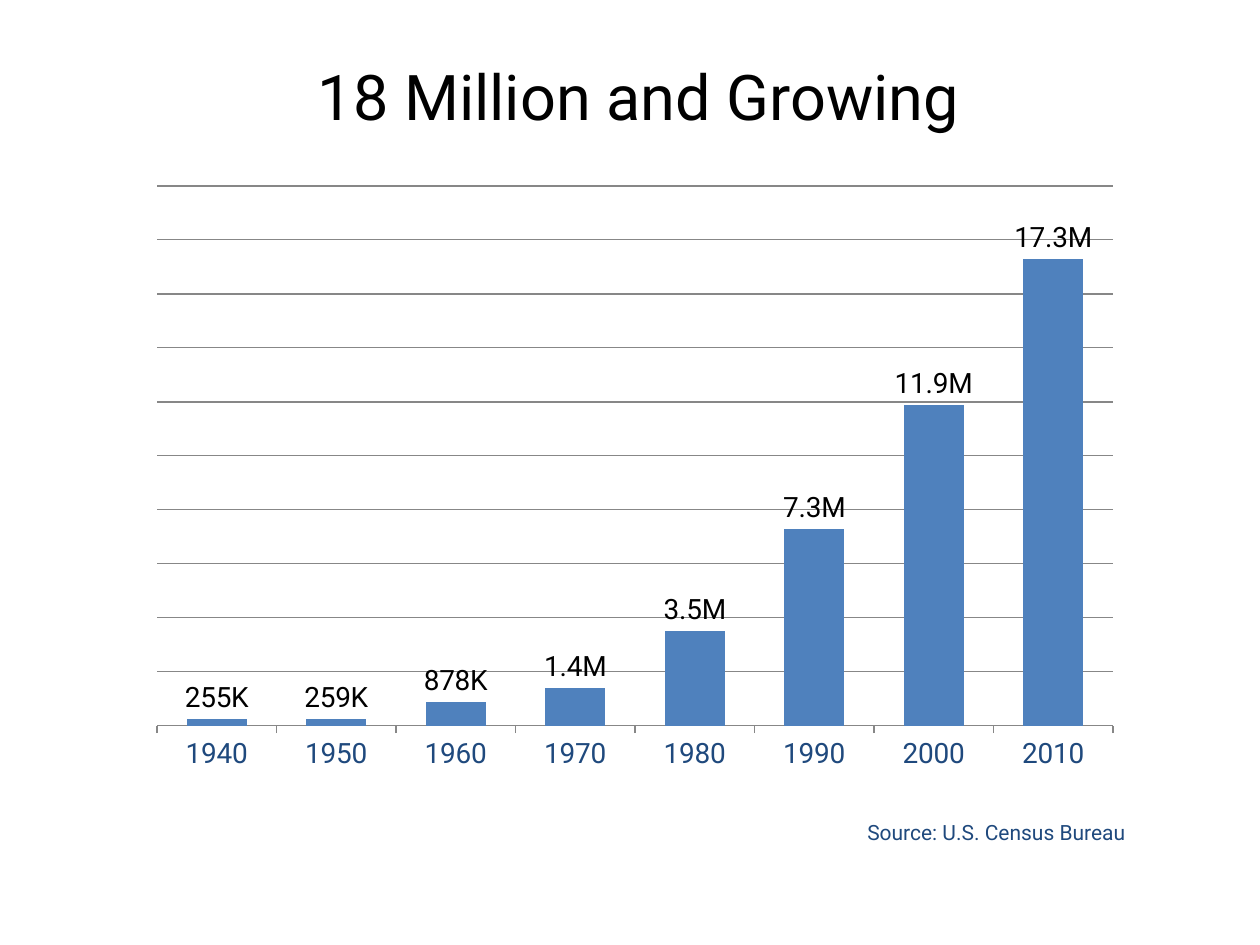
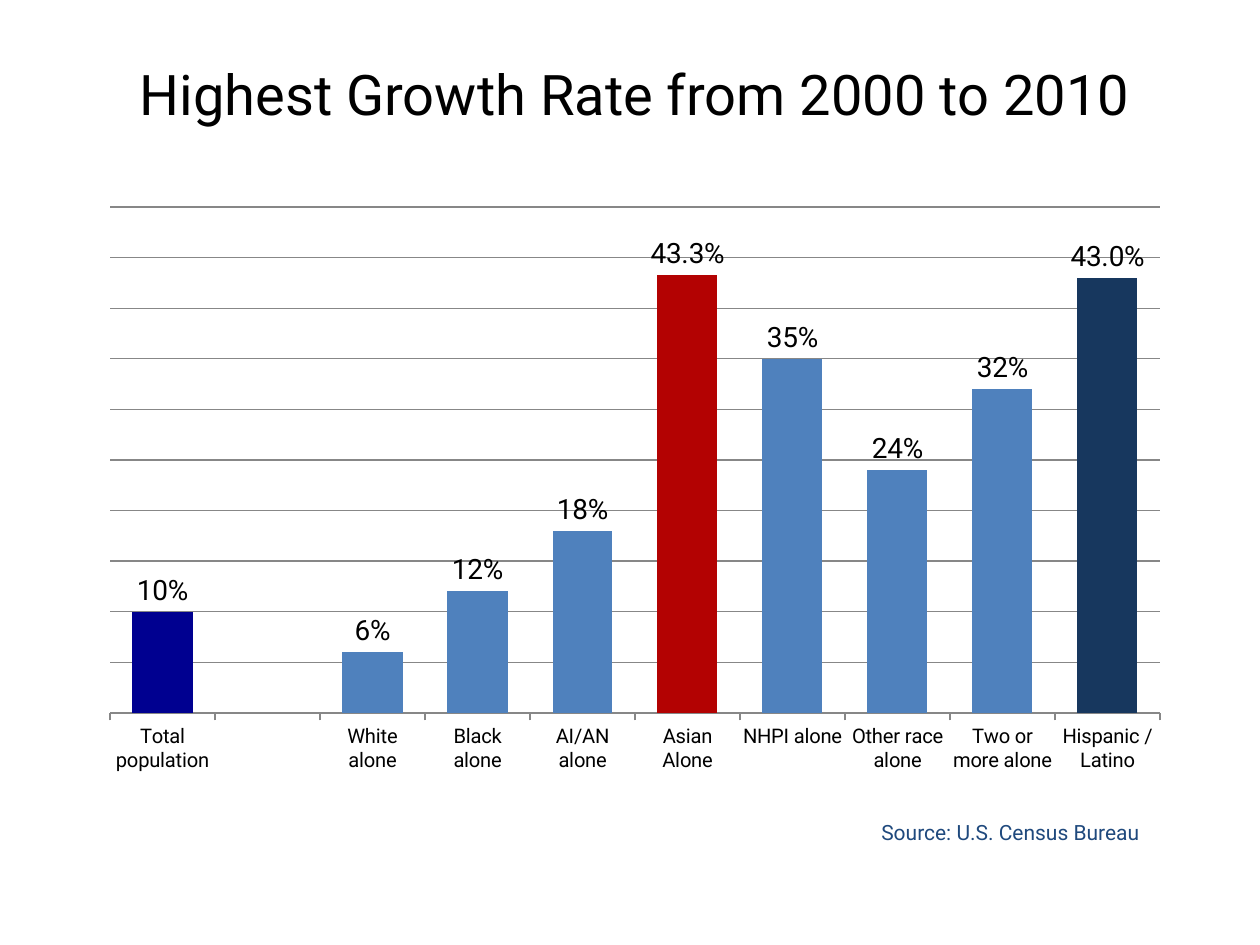
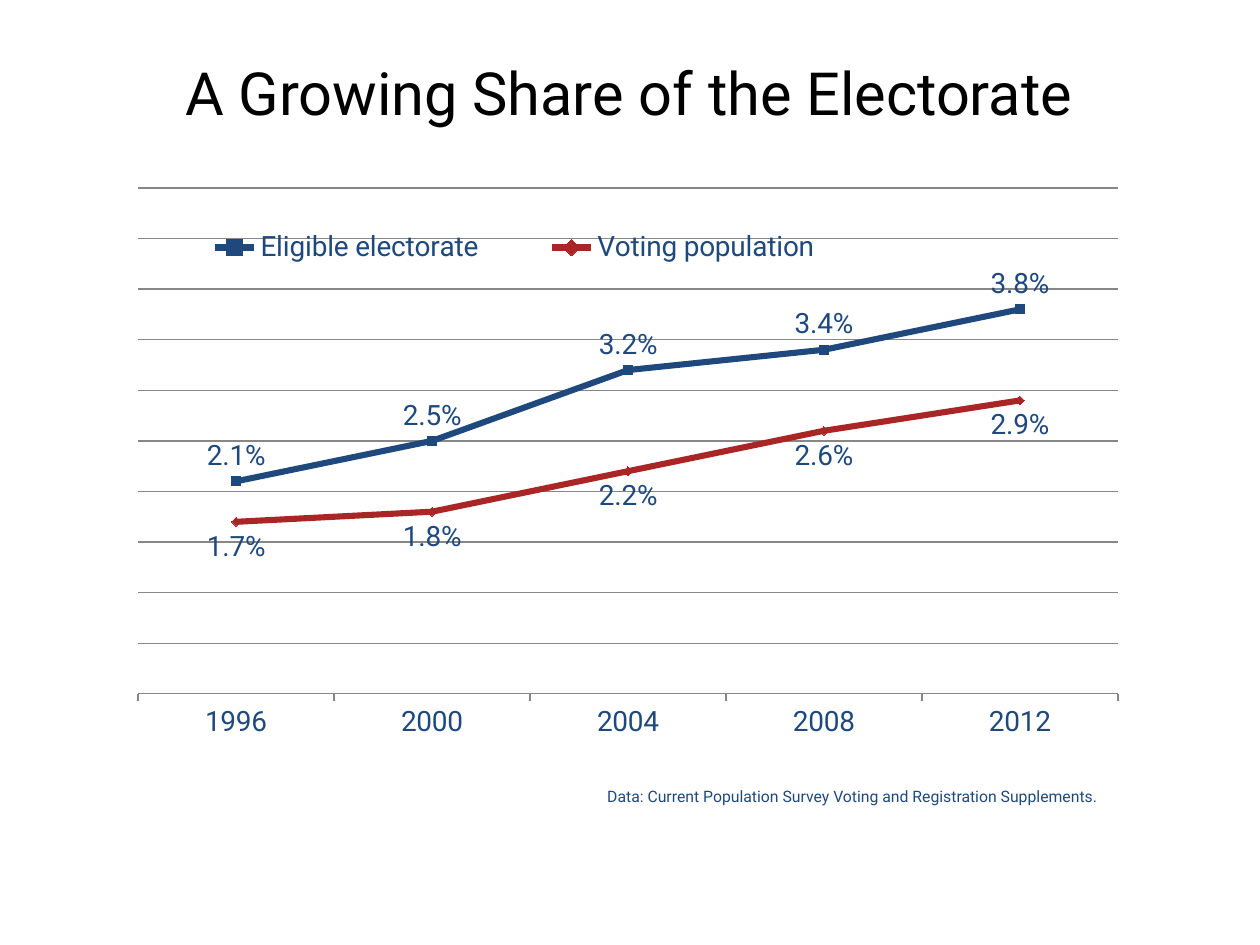
from dataclasses import dataclass

from lxml.etree import SubElement
from pptx import Presentation
from pptx.chart.data import CategoryChartData
from pptx.dml.color import RGBColor
from pptx.enum.chart import XL_CHART_TYPE as ChartType
from pptx.enum.chart import XL_LABEL_POSITION as LabelPos
from pptx.enum.chart import XL_LEGEND_POSITION as LegendPos
from pptx.enum.chart import XL_MARKER_STYLE as Marker
from pptx.enum.chart import XL_TICK_MARK as Tick
from pptx.enum.text import MSO_ANCHOR as Anchor
from pptx.enum.text import PP_ALIGN as Align
from pptx.oxml.ns import qn
from pptx.util import Emu, Pt


@dataclass(frozen=True)
class Theme:
    font: str = "Roboto"
    ink: str = "000000"
    navy: str = "1F497D"
    bar: str = "4F81BD"
    total: str = "000090"
    asian: str = "B30202"
    hispanic: str = "17375E"
    voting: str = "AA2626"
    grid: str = "878787"
    label_size: float = 16
    small_label_size: float = 11.5
    source_size: float = 12
    note_size: float = 9
    grid_width: float = 0.75
    trend_width: float = 3.5
    marker_size: int = 5


THEME = Theme()
SLIDE_SIZE = (1260, 945)
SOURCE = "Source: U.S. Census Bureau"


def px(length):
    return Emu(round(length * 914400 / 126))


def box_emu(box):
    return [px(length) for length in box]


def set_font(font, size, color=THEME.ink):
    for key, value in {"name": THEME.font, "size": Pt(size), "bold": False}.items():
        setattr(font, key, value)
    font.color.rgb = RGBColor.from_string(color)


def set_line(line, color, width):
    line.color.rgb = RGBColor.from_string(color)
    line.width = Pt(width)


def set_fill(fill, color):
    fill.solid()
    fill.fore_color.rgb = RGBColor.from_string(color)


def add_text(slide, box, text, size, color, align, anchor):
    frame = slide.shapes.add_textbox(*box_emu(box)).text_frame
    frame.word_wrap = True
    frame.vertical_anchor = anchor
    paragraph = frame.paragraphs[0]
    paragraph.alignment = align
    run = paragraph.add_run()
    run.text = text
    set_font(run.font, size, color)


def add_title(slide, box, text, size):
    add_text(slide, box, text, size, THEME.ink, Align.CENTER, Anchor.MIDDLE)


def add_source(slide, box, text, size=THEME.source_size):
    add_text(slide, box, text, size, THEME.navy, Align.RIGHT, Anchor.TOP)


def place_in_chart(part, index, chart_box, part_box, inner=False):
    """Fix a plot area or legend at a px box inside the chart box."""
    for old in part.findall(qn("c:layout")):
        part.remove(old)
    layout = SubElement(part, qn("c:layout"))
    part.insert(index, layout)
    manual = SubElement(layout, qn("c:manualLayout"))
    width, height = chart_box[2:]
    left, top, part_width, part_height = part_box
    settings = {"layoutTarget": "inner"} if inner else {}
    settings |= {
        "xMode": "edge",
        "yMode": "edge",
        "x": round(left / width, 4),
        "y": round(top / height, 4),
        "w": round(part_width / width, 4),
        "h": round(part_height / height, 4),
    }
    for tag, value in settings.items():
        SubElement(manual, qn(f"c:{tag}")).set("val", str(value))


def add_chart(slide, kind, box, plot_box, categories, series, top, step,
              axis_size=THEME.label_size, axis_color=THEME.ink):
    """Add a chart with a hidden value axis and plain gridlines."""
    data = CategoryChartData()
    data.categories = categories
    for name, values in series.items():
        data.add_series(name, values)
    chart = slide.shapes.add_chart(kind, *box_emu(box), data).chart
    chart.has_title = False
    chart.has_legend = False
    set_font(chart.font, THEME.label_size)
    place_in_chart(chart.plots[0]._element.getparent(), 0, box, plot_box, inner=True)
    chart.plots[0].vary_by_categories = False

    scale = chart.value_axis
    limits = {"minimum_scale": 0, "maximum_scale": top, "major_unit": step,
              "has_major_gridlines": True, "visible": False}
    for key, value in limits.items():
        setattr(scale, key, value)
    set_line(scale.major_gridlines.format.line, THEME.grid, THEME.grid_width)

    axis = chart.category_axis
    axis.major_tick_mark = Tick.OUTSIDE
    axis.minor_tick_mark = Tick.NONE
    set_line(axis.format.line, THEME.grid, THEME.grid_width)
    set_font(axis.tick_labels.font, axis_size, axis_color)
    return chart


def show_values(labels, number_format, position, color=THEME.ink):
    settings = {"show_value": True, "number_format": number_format,
                "number_format_is_linked": False, "position": position}
    for key, value in settings.items():
        setattr(labels, key, value)
    set_font(labels.font, THEME.label_size, color)


def style_columns(chart, gap, number_format, highlights=None):
    plot = chart.plots[0]
    plot.gap_width = gap
    columns = plot.series[0]
    set_fill(columns.format.fill, THEME.bar)
    for index, color in (highlights or {}).items():
        set_fill(columns.points[index].format.fill, color)
    show_values(columns.data_labels, number_format, LabelPos.OUTSIDE_END)


def style_trend(trend, color, marker, label_position):
    trend.smooth = False
    set_line(trend.format.line, color, THEME.trend_width)
    trend.marker.style = marker
    trend.marker.size = THEME.marker_size
    set_fill(trend.marker.format.fill, color)
    set_line(trend.marker.format.line, color, THEME.grid_width)
    show_values(trend.data_labels, "0.0%", label_position, THEME.navy)


def add_overlay_legend(chart, chart_box, legend_box):
    chart.has_legend = True
    legend = chart.legend
    legend.position = LegendPos.RIGHT
    legend.include_in_layout = True
    set_font(legend.font, THEME.label_size, THEME.navy)
    place_in_chart(legend._element, 1, chart_box, legend_box)


def population_slide(slide):
    add_title(slide, (67, 35, 1143, 121), "18 Million and Growing", 36)
    chart = add_chart(
        slide, ChartType.COLUMN_CLUSTERED, (125, 166, 1013, 612), (32, 20, 956, 540),
        [str(year) for year in range(1940, 2011, 10)],
        {"Series 1": (255e3, 259e3, 878e3, 1.4e6, 3.5e6, 7.3e6, 11.9e6, 17.3e6)},
        top=20e6, step=2e6, axis_color=THEME.navy)
    style_columns(chart, 100, '[<1000000]0,"K";0.0,,"M"')
    add_source(slide, (708, 813, 430, 38), SOURCE)


def growth_rate_slide(slide):
    add_title(slide, (53, 30, 1164, 127), "Highest Growth Rate from 2000 to 2010", 32)
    rates = {
        "Total population": 0.10, "": None, "White alone": 0.06, "Black alone": 0.12,
        "AI/AN alone": 0.18, "Asian Alone": 0.433, "NHPI alone": 0.35,
        "Other race alone": 0.24, "Two or more alone": 0.32, "Hispanic / Latino": 0.43,
    }
    chart = add_chart(
        slide, ChartType.COLUMN_CLUSTERED, (53, 186, 1164, 610), (57, 21, 1050, 506),
        list(rates), {"Series 1": rates.values()},
        top=0.5, step=0.05, axis_size=THEME.small_label_size)
    style_columns(chart, 75, "[>0.4]0.0%;0%",
                  {0: THEME.total, 5: THEME.asian, 9: THEME.hispanic})
    add_source(slide, (722, 813, 430, 38), SOURCE)


def electorate_slide(slide):
    add_title(slide, (53, 28, 1152, 128), "A Growing Share of the Electorate", 34)
    add_source(slide, (572, 781, 537, 32),
               "Data: Current Population Survey Voting and Registration Supplements.",
               THEME.note_size)
    box = (117, 176, 1021, 573)
    chart = add_chart(
        slide, ChartType.LINE_MARKERS, box, (21, 12, 980, 506),
        [str(year) for year in range(1996, 2013, 4)],
        {"Eligible electorate": (0.021, 0.025, 0.032, 0.034, 0.038),
         "Voting population": (0.017, 0.018, 0.022, 0.026, 0.029)},
        top=0.05, step=0.005, axis_color=THEME.navy)
    eligible, voting = chart.plots[0].series
    style_trend(eligible, THEME.navy, Marker.SQUARE, LabelPos.ABOVE)
    style_trend(voting, THEME.voting, Marker.DIAMOND, LabelPos.BELOW)
    add_overlay_legend(chart, box, (34, 43, 727, 57))


def main():
    deck = Presentation()
    deck.slide_width, deck.slide_height = box_emu(SLIDE_SIZE)
    blank = deck.slide_layouts[6]
    for build in (population_slide, growth_rate_slide, electorate_slide):
        build(deck.slides.add_slide(blank))
    deck.save("out.pptx")


if __name__ == "__main__":
    main()
